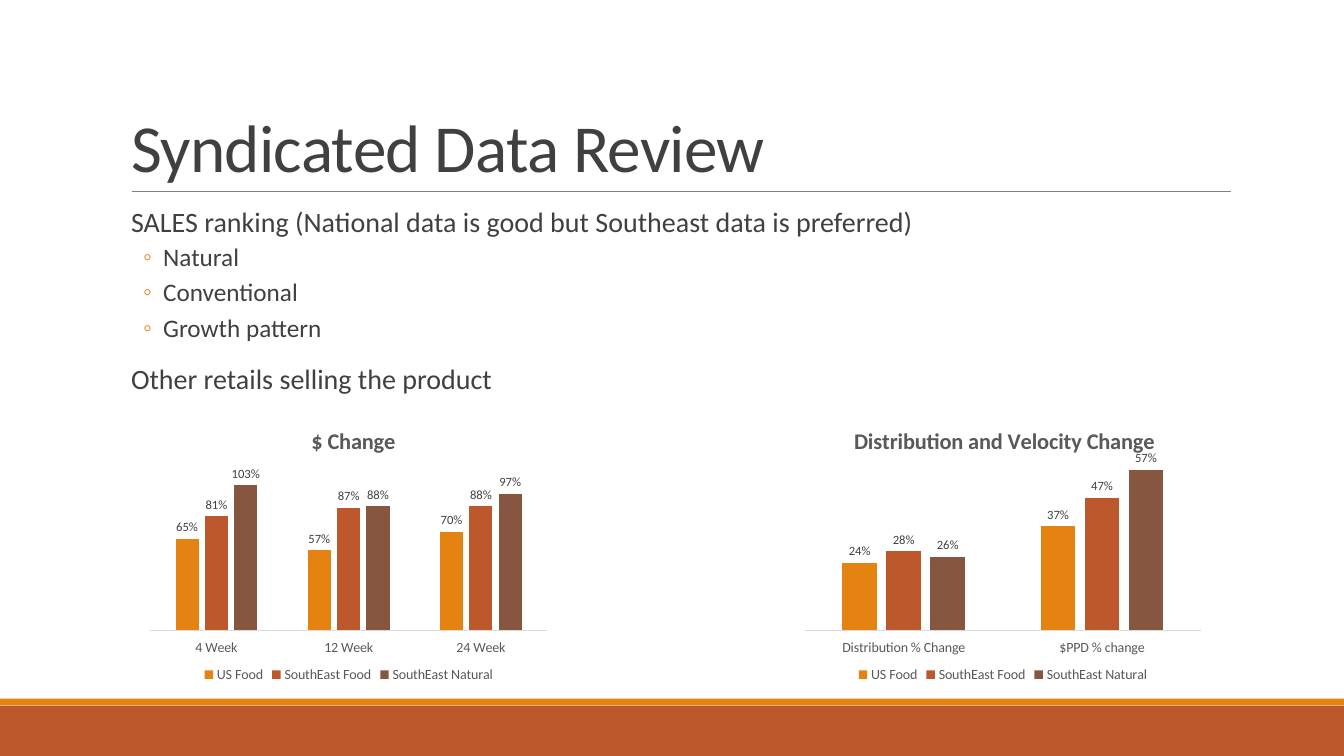
from pptx import Presentation
from pptx.chart.data import CategoryChartData
from pptx.dml.color import RGBColor
from pptx.enum.chart import (XL_CHART_TYPE, XL_LABEL_POSITION,
                             XL_LEGEND_POSITION, XL_TICK_LABEL_POSITION,
                             XL_TICK_MARK)
from pptx.enum.shapes import MSO_CONNECTOR, MSO_SHAPE
from pptx.enum.text import MSO_ANCHOR, MSO_AUTO_SIZE, PP_ALIGN
from pptx.oxml import parse_xml
from pptx.oxml.ns import nsdecls, qn
from pptx.oxml.xmlchemy import OxmlElement
from pptx.util import Pt

ORANGE = RGBColor(0xE4, 0x83, 0x12)
RUST = RGBColor(0xBD, 0x58, 0x2C)
BROWN = RGBColor(0x86, 0x56, 0x40)
DARK = RGBColor(0x40, 0x40, 0x40)
GREY = RGBColor(0x59, 0x59, 0x59)
RULE = RGBColor(0x80, 0x80, 0x80)
PALE = RGBColor(0xD9, 0xD9, 0xD9)
FACE = "Calibri"
NAMES = ("US Food", "SouthEast Food", "SouthEast Natural")
FILLS = (ORANGE, RUST, BROWN)


def style(font, size, color, bold=False):
    font.name, font.size, font.bold = FACE, Pt(size), bold
    font.color.rgb = color


def place(shape, left, top, width, height):
    shape.left, shape.top = Pt(left), Pt(top)
    shape.width, shape.height = Pt(width), Pt(height)


def add_text(frame, text, size=20, color=DARK, level=0, line=0.9, before=0,
             after=0, left=0, hang=0, mark=None, kern=0):
    """Add a paragraph, filling the first one if it is still empty."""
    para = frame.paragraphs[0]
    if para.text:
        para = frame.add_paragraph()
    para.level, para.alignment = level, PP_ALIGN.LEFT
    para.line_spacing = line
    para.space_before, para.space_after = Pt(before), Pt(after)
    run = para.add_run()
    run.text = text
    style(run.font, size, color)
    if kern:
        run.font._element.set("spc", str(kern))
    props = para._p.get_or_add_pPr()
    props.set("marL", str(Pt(left)))
    props.set("indent", str(Pt(-hang)))
    if mark:
        tint = OxmlElement("a:buClr")
        rgb = OxmlElement("a:srgbClr")
        rgb.set("val", str(ORANGE))
        tint.append(rgb)
        props.append(tint)
        char = OxmlElement("a:buChar")
        char.set("char", mark)
        props.append(char)
    else:
        props.append(OxmlElement("a:buNone"))


def add_band(slide, top, height, color):
    band = slide.shapes.add_shape(MSO_SHAPE.RECTANGLE, 0, Pt(top),
                                  Pt(960), Pt(height))
    band.shadow.inherit = False
    band.fill.solid()
    band.fill.fore_color.rgb = color
    band.line.fill.background()


def add_rule(slide, left, right, top):
    rule = slide.shapes.add_connector(MSO_CONNECTOR.STRAIGHT, Pt(left),
                                      Pt(top), Pt(right), Pt(top))
    rule.line.color.rgb = RULE
    rule.line.width = Pt(0.5)
    rule._element.spPr.append(OxmlElement("a:effectLst"))


def set_layout(parent, index, **parts):
    """Fix a chart part at fractions of the chart's size."""
    for old in parent.findall(qn("c:layout")):
        parent.remove(old)
    inner = '<c:layoutTarget val="inner"/>' if "w" in parts else ""
    modes = "".join(f'<c:{key}Mode val="edge"/>' for key in "xy")
    sizes = "".join(f'<c:{key} val="{val}"/>' for key, val in parts.items())
    parent.insert(index, parse_xml(
        f'<c:layout {nsdecls("c")}><c:manualLayout>{inner}{modes}{sizes}'
        '</c:manualLayout></c:layout>'))


def add_bars(slide, left, title, shift, cats, rows, top):
    data = CategoryChartData(number_format="0%")
    data.categories = cats
    for name, row in zip(NAMES, rows):
        data.add_series(name, row)
    chart = slide.shapes.add_chart(
        XL_CHART_TYPE.COLUMN_CLUSTERED, Pt(left), Pt(289.5), Pt(295.2),
        Pt(200.9), data).chart
    style(chart.font, 10, GREY)

    chart.has_title = True
    frame = chart.chart_title.text_frame
    frame.text = title
    style(frame.paragraphs[0].runs[0].font, 16, GREY, bold=True)
    set_layout(chart.chart_title._element, 1, x=shift, y=0.06)

    chart.has_legend = True
    chart.legend.position = XL_LEGEND_POSITION.BOTTOM
    chart.legend.include_in_layout = False
    style(chart.legend.font, 10, GREY)

    axis = chart.category_axis
    axis.major_tick_mark = axis.minor_tick_mark = XL_TICK_MARK.NONE
    axis.tick_label_position = XL_TICK_LABEL_POSITION.LOW
    axis.format.line.color.rgb = PALE
    axis.format.line.width = Pt(0.75)
    style(axis.tick_labels.font, 10, GREY)
    scale = chart.value_axis
    scale.visible = scale.has_major_gridlines = False
    scale.minimum_scale, scale.maximum_scale = 0, top

    plot = chart.plots[0]
    plot.gap_width, plot.overlap = 219, -27
    plot.vary_by_categories = False
    for series, color in zip(plot.series, FILLS):
        series.format.fill.solid()
        series.format.fill.fore_color.rgb = color
        labels = series.data_labels
        labels.show_value = True
        labels.number_format = "0%"
        labels.number_format_is_linked = False
        labels.position = XL_LABEL_POSITION.OUTSIDE_END
        style(labels.font, 9, DARK)
    area = chart._chartSpace.chart.plotArea
    set_layout(area, 0, x=0.02, y=0.2, w=0.96, h=0.6)


def main():
    deck = Presentation()
    deck.slide_width, deck.slide_height = Pt(960), Pt(540)
    slide = deck.slides.add_slide(deck.slide_layouts[1])
    add_band(slide, 504, 36, RUST)
    add_band(slide, 499, 4.8, ORANGE)
    add_rule(slide, 94.3, 879, 136.8)

    title, body = slide.placeholders
    place(title, 86.4, 22.6, 792, 114.2)
    place(body, 86.4, 145.4, 792, 316.8)
    for holder in (title, body):
        holder.text_frame.auto_size = MSO_AUTO_SIZE.NONE
        holder.text_frame.word_wrap = True
    title.text_frame.vertical_anchor = MSO_ANCHOR.BOTTOM
    add_text(title.text_frame, "Syndicated Data Review", size=48, line=0.85,
             kern=-50)

    frame = body.text_frame
    frame.vertical_anchor = MSO_ANCHOR.TOP
    frame.margin_left = frame.margin_right = 0
    head = dict(before=12, after=2, left=7.2)
    add_text(frame, "SALES ranking (National data is good but Southeast "
             "data is preferred)", **head)
    for item in ("Natural", "Conventional", "Growth pattern"):
        add_text(frame, item, size=18, level=1, before=2, after=4,
                 left=30.2, hang=14.4, mark="◦")
    add_text(frame, "Other retails selling the product", **head)

    add_bars(slide, 101.5, "$ Change", 0.4,
             ("4 Week", "12 Week", "24 Week"),
             ((0.65, 0.57, 0.7), (0.81, 0.87, 0.88), (1.03, 0.88, 0.97)),
             top=1.2)
    add_bars(slide, 568.8, "Distribution and Velocity Change", 0.13,
             ("Distribution % Change", "$PPD % change"),
             ((0.24, 0.37), (0.28, 0.47), (0.26, 0.57)), top=0.6)
    deck.save("out.pptx")


if __name__ == "__main__":
    main()
